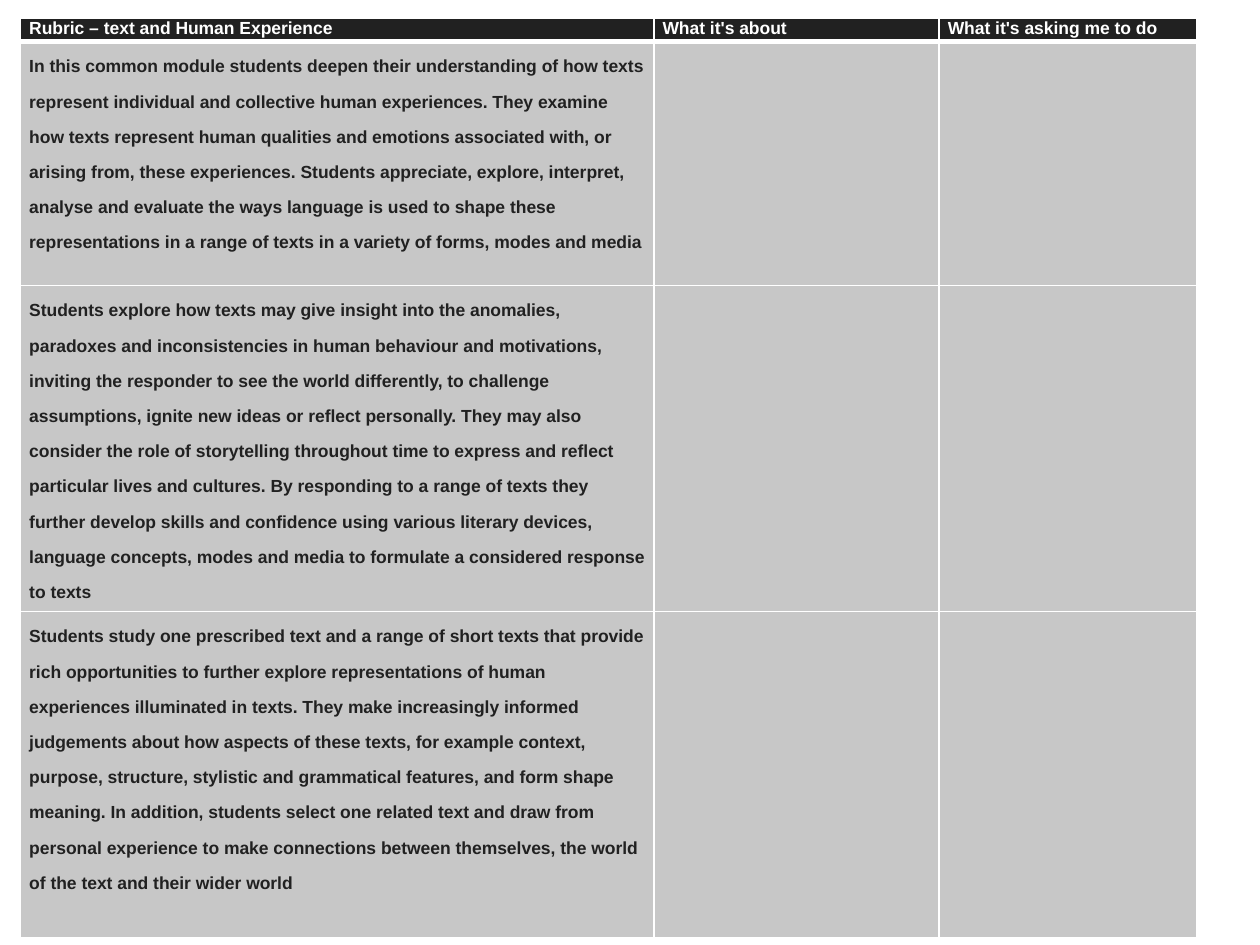
"""Build the rubric table slide on text and human experience."""
from lxml.etree import SubElement
from pptx import Presentation
from pptx.dml.color import RGBColor as RGB
from pptx.oxml.ns import qn
from pptx.util import Pt

DARK = RGB(0x21, 0x21, 0x21)
GREY = RGB(0xC7, 0xC7, 0xC7)
WHITE = RGB(0xFF, 0xFF, 0xFF)

HEADER = ["Rubric – text and Human Experience", "What it's about", "What it's asking me to do"]
RUBRIC = [
    "In this common module students deepen their understanding of how texts represent "
    "individual and collective human experiences. They examine how texts represent human "
    "qualities and emotions associated with, or arising from, these experiences. Students "
    "appreciate, explore, interpret, analyse and evaluate the ways language is used to shape "
    "these representations in a range of texts in a variety of forms, modes and media",
    "Students explore how texts may give insight into the anomalies, paradoxes and "
    "inconsistencies in human behaviour and motivations, inviting the responder to see the "
    "world differently, to challenge assumptions, ignite new ideas or reflect personally. "
    "They may also consider the role of storytelling throughout time to express and reflect "
    "particular lives and cultures. By responding to a range of texts they further develop "
    "skills and confidence using various literary devices, language concepts, modes and media "
    "to formulate a considered response to texts",
    "Students study one prescribed text and a range of short texts that provide rich "
    "opportunities to further explore representations of human experiences illuminated in "
    "texts. They make increasingly informed judgements about how aspects of these texts, for "
    "example context, purpose, structure, stylistic and grammatical features, and form shape "
    "meaning. In addition, students select one related text and draw from personal experience "
    "to make connections between themselves, the world of the text and their wider world",
]
ROWS = [HEADER] + [[text, "", ""] for text in RUBRIC]
COL_WIDTHS = [361.9, 163, 147.3]
ROW_HEIGHTS = [13.5, 139.5, 186.3, 186.3]
LEFT, TOP = 11.7, 10.2


def set_borders(cell, bottom):
    tcPr = cell._tc.get_or_add_tcPr()
    for i, (side, width) in enumerate([("L", 1), ("R", 1), ("T", 1), ("B", bottom)]):
        ln = SubElement(tcPr, qn(f"a:ln{side}"), w=str(Pt(width)))
        fill = SubElement(ln, qn("a:solidFill"))
        SubElement(fill, qn("a:srgbClr"), val=str(WHITE))
        tcPr.insert(i, ln)


def fill_cell(cell, text, is_header):
    cell.margin_left = cell.margin_right = Pt(5)
    cell.margin_top = cell.margin_bottom = 0
    cell.fill.solid()
    cell.fill.fore_color.rgb = DARK if is_header else GREY
    set_borders(cell, 3 if is_header else 1)
    cell.text = text
    p = cell.text_frame.paragraphs[0]
    p.line_spacing = 1.07 if is_header else 1.8
    p.font.name, p.font.size, p.font.bold = "Arial", Pt(10), True
    p.font.color.rgb = WHITE if is_header else DARK


prs = Presentation()
prs.slide_width, prs.slide_height = Pt(720), Pt(540)
s = prs.slides.add_slide(prs.slide_layouts[6])
table = s.shapes.add_table(len(ROWS), len(HEADER), Pt(LEFT), Pt(TOP),
                           Pt(sum(COL_WIDTHS)), Pt(sum(ROW_HEIGHTS))).table
table.horz_banding = False
for col, width in zip(table.columns, COL_WIDTHS):
    col.width = Pt(width)
for r, (row, height) in enumerate(zip(ROWS, ROW_HEIGHTS)):
    table.rows[r].height = Pt(height)
    for c, text in enumerate(row):
        fill_cell(table.cell(r, c), text, r == 0)
prs.save("out.pptx")
